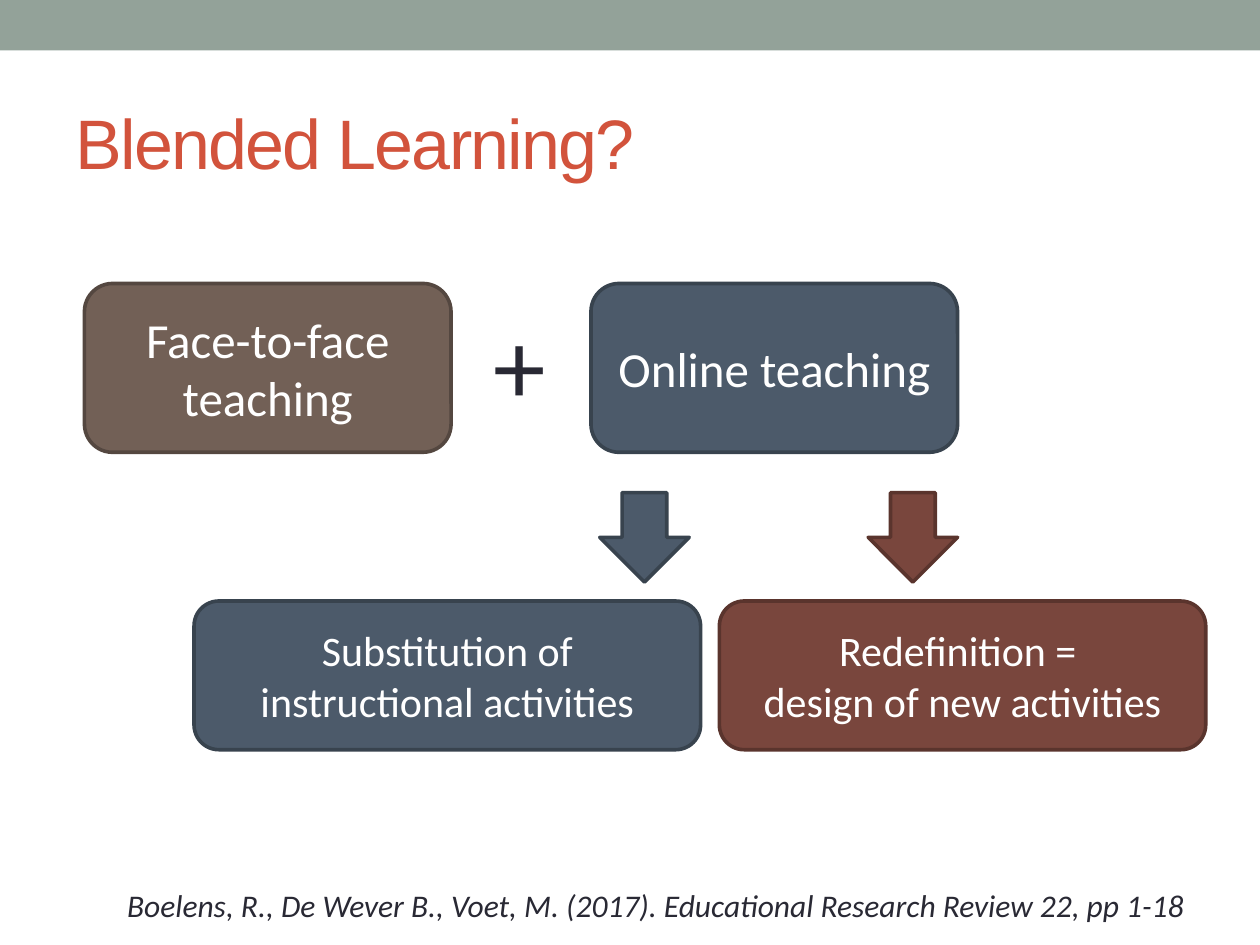
from dataclasses import dataclass

from pptx import Presentation
from pptx.dml.color import RGBColor
from pptx.enum.shapes import MSO_SHAPE
from pptx.enum.text import MSO_ANCHOR, PP_ALIGN
from pptx.util import Inches, Pt

RECT = MSO_SHAPE.RECTANGLE
ROUNDED = MSO_SHAPE.ROUNDED_RECTANGLE
DOWN_ARROW = MSO_SHAPE.DOWN_ARROW
TOP, MIDDLE = MSO_ANCHOR.TOP, MSO_ANCHOR.MIDDLE
LEFT, CENTER = PP_ALIGN.LEFT, PP_ALIGN.CENTER


@dataclass(frozen=True)
class Theme:
    """Colours, fonts and type sizes of the slide."""
    heading_font: str = "Arial"
    body_font: str = "Calibri"
    band: str = "93A299"
    title: str = "D2533C"
    text: str = "292934"
    white: str = "FFFFFF"
    brown: tuple = ("726056", "544740")
    blue: tuple = ("4C5A6A", "38434E")
    red: tuple = ("79463D", "5A342D")
    outline: float = 2.08
    title_size: int = 40
    plus_size: int = 60
    mode_size: int = 28
    outcome_size: int = 24
    citation_size: int = 18


THEME = Theme()


def write(sp, lines, size, color, font=THEME.body_font, align=LEFT,
          anchor=TOP, wrap=True, italic=False):
    """Write one paragraph per line into a shape and return its runs."""
    tf = sp.text_frame
    tf.word_wrap = wrap
    tf.vertical_anchor = anchor
    runs = []
    for i, line in enumerate(lines):
        p = tf.add_paragraph() if i else tf.paragraphs[0]
        p.alignment = align
        r = p.add_run()
        r.text = line
        r.font.name = font
        r.font.size = Pt(size)
        r.font.italic = italic
        r.font.color.rgb = RGBColor.from_string(color)
        runs.append(r)
    return runs


def add_block(shapes, kind, box, fill, outline=None):
    """Add a flat filled shape, outlined if an outline colour is given."""
    sp = shapes.add_shape(kind, *map(Inches, box))
    sp.shadow.inherit = False
    sp.fill.solid()
    sp.fill.fore_color.rgb = RGBColor.from_string(fill)
    if outline:
        sp.line.color.rgb = RGBColor.from_string(outline)
        sp.line.width = Pt(THEME.outline)
    else:
        sp.line.fill.background()
    return sp


def add_card(shapes, box, lines, size, colors):
    """Add a rounded card with centred white text."""
    sp = add_block(shapes, ROUNDED, box, *colors)
    write(sp, lines, size, THEME.white, align=CENTER, anchor=MIDDLE)


def add_title(s, box, text):
    """Add the slide title with slightly tightened letters."""
    sp = s.shapes.add_textbox(*map(Inches, box))
    for r in write(sp, [text], THEME.title_size, THEME.title,
                   font=THEME.heading_font, anchor=MIDDLE):
        r.font._element.set("spc", "-100")


def add_teaching_modes(s, box):
    """Add the two teaching modes at the ends of the box, joined by a plus."""
    x, y, w, h = box
    card_w = 2.91
    shapes = s.shapes.add_group_shape().shapes
    modes = (
        (x, "Face-to-face teaching", THEME.brown),
        (x + w - card_w, "Online teaching", THEME.blue),
    )
    for left, text, colors in modes:
        add_card(shapes, (left, y, card_w, h), [text], THEME.mode_size, colors)
    plus_box = (x + 3.15, y + 0.08, 0.62, 1.11)
    plus = shapes.add_textbox(*map(Inches, plus_box))
    write(plus, ["+"], THEME.plus_size, THEME.text, wrap=False)


def add_outcome(s, box, arrow_x, lines, colors):
    """Add a down arrow at the top of the box and a card filling the rest."""
    x, y, w, h = box
    arrow, card_h = 0.71, 1.18
    shapes = s.shapes.add_group_shape().shapes
    add_block(shapes, DOWN_ARROW, (arrow_x, y, arrow, arrow), *colors)
    add_card(shapes, (x, y + h - card_h, w, card_h), lines,
             THEME.outcome_size, colors)


def add_citation(s, box, text):
    """Add the source reference in italics."""
    sp = s.shapes.add_textbox(*map(Inches, box))
    write(sp, [text], THEME.citation_size, THEME.text, italic=True)


def main():
    """Build the slide and save it."""
    prs = Presentation()
    prs.slide_width, prs.slide_height = Inches(10), Inches(7.5)
    s = prs.slides.add_slide(prs.slide_layouts[6])
    add_block(s.shapes, RECT, (0, 0, 10, 0.4), THEME.band)
    add_title(s, (0.5, 0.58, 9, 1.08), "Blended Learning?")
    add_teaching_modes(s, (0.67, 2.25, 6.93, 1.34))
    add_outcome(s, (1.54, 3.91, 4.02, 2.04), 4.76,
                ["Substitution of instructional activities"], THEME.blue)
    add_outcome(s, (5.71, 3.91, 3.86, 2.04), 6.89,
                ["Redefinition = ", "design of new activities"], THEME.red)
    add_citation(s, (0.91, 6.98, 8.82, 0.4),
                 "Boelens, R., De Wever B., Voet, M. (2017). "
                 "Educational Research Review 22, pp 1-18")
    prs.save("out.pptx")


if __name__ == "__main__":
    main()
